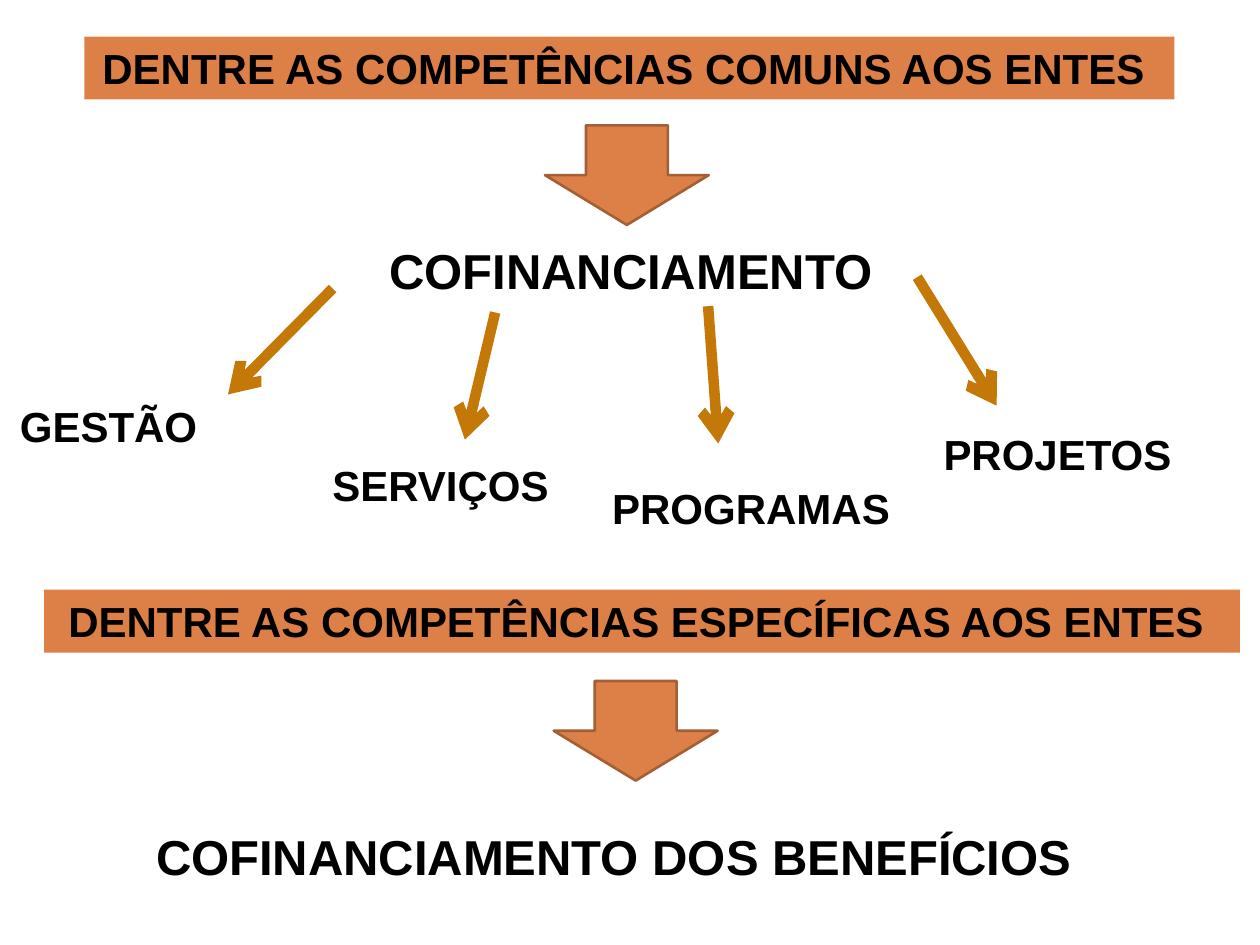
import pptx
import pptx.util
import pptx.dml.color
import pptx.enum.shapes
import pptx.enum.text
import pptx.oxml
import pptx.oxml.ns
from dataclasses import dataclass

Inches = pptx.util.Inches
Pt = pptx.util.Pt
RGBColor = pptx.dml.color.RGBColor
Shapes = pptx.enum.shapes.MSO_SHAPE
Align = pptx.enum.text.PP_ALIGN


@dataclass(frozen=True)
class Theme:
    font: str = "Arial"
    text: RGBColor = RGBColor(0x00, 0x00, 0x00)
    orange: RGBColor = RGBColor(0xDD, 0x80, 0x47)
    outline: RGBColor = RGBColor(0xA3, 0x5F, 0x35)
    arrow: RGBColor = RGBColor(0xC4, 0x78, 0x07)
    heading: Pt = Pt(28)
    label: Pt = Pt(24)


theme = Theme()


def write_text(shape, text, size, alignment, wrap=True):
    frame = shape.text_frame
    frame.word_wrap = wrap
    frame.auto_size = pptx.enum.text.MSO_AUTO_SIZE.SHAPE_TO_FIT_TEXT
    frame.vertical_anchor = pptx.enum.text.MSO_ANCHOR.TOP
    paragraph = frame.paragraphs[0]
    paragraph.alignment = alignment
    run = paragraph.add_run()
    run.text = text
    run.font.name = theme.font
    run.font.size = size
    run.font.bold = True
    run.font.color.rgb = theme.text


presentation = pptx.Presentation()
presentation.slide_width = Inches(10)
presentation.slide_height = Inches(7.5)
slide = presentation.slides.add_slide(presentation.slide_layouts[6])

banners = [
    ("DENTRE AS COMPETÊNCIAS COMUNS AOS ENTES ", 0.67, 0.29, 8.65, False),
    ("DENTRE AS COMPETÊNCIAS ESPECÍFICAS AOS ENTES ", 0.35, 4.68, 9.49, True),
]
for text, left, top, width, wrap in banners:
    banner = slide.shapes.add_shape(
        Shapes.RECTANGLE, Inches(left), Inches(top), Inches(width), Inches(0.5)
    )
    banner.shadow.inherit = False
    banner.fill.solid()
    banner.fill.fore_color.rgb = theme.orange
    banner.line.fill.background()
    write_text(banner, text, theme.label, Align.CENTER, wrap)

for left, top in [(4.58, 0.74), (4.65, 5.15)]:
    block_arrow = slide.shapes.add_shape(
        Shapes.RIGHT_ARROW, Inches(left), Inches(top), Inches(0.79), Inches(1.3)
    )
    block_arrow.rotation = 90
    block_arrow.shadow.inherit = False
    block_arrow.fill.solid()
    block_arrow.fill.fore_color.rgb = theme.orange
    block_arrow.line.color.rgb = theme.outline
    block_arrow.line.width = Pt(1.5)

branches = [
    (2.64, 2.29, 1.81, 3.13),
    (3.93, 2.48, 3.69, 3.49),
    (5.62, 2.43, 5.7, 3.52),
    (7.28, 2.2, 7.91, 3.22),
]
for branch in branches:
    connector = slide.shapes.add_connector(
        pptx.enum.shapes.MSO_CONNECTOR.STRAIGHT, *map(Inches, branch)
    )
    connector.line.color.rgb = theme.arrow
    connector.line.width = Pt(6)
    tail = pptx.oxml.parse_xml(
        f'<a:tailEnd {pptx.oxml.ns.nsdecls("a")} type="arrow"/>'
    )
    connector.line._get_or_add_ln().append(tail)
    effects = pptx.oxml.parse_xml(f'<a:effectLst {pptx.oxml.ns.nsdecls("a")}/>')
    connector._element.spPr.append(effects)

labels = [
    ("COFINANCIAMENTO", 1.9, 1.86, 6.21, 0.57, theme.heading, Align.CENTER),
    ("GESTÃO", 0.06, 3.13, 2.03, 0.5, theme.label, Align.LEFT),
    ("SERVIÇOS", 2.54, 3.6, 2.03, 0.5, theme.label, Align.LEFT),
    ("PROGRAMAS", 4.76, 3.78, 2.52, 0.5, theme.label, Align.LEFT),
    ("PROJETOS", 7.39, 3.35, 2.03, 0.5, theme.label, Align.LEFT),
    ("COFINANCIAMENTO DOS BENEFÍCIOS ", 0.91, 6.51, 8.03, 0.57, theme.heading, Align.CENTER),
]
for text, left, top, width, height, size, alignment in labels:
    label = slide.shapes.add_textbox(
        Inches(left), Inches(top), Inches(width), Inches(height)
    )
    write_text(label, text, size, alignment)

presentation.save("out.pptx")
